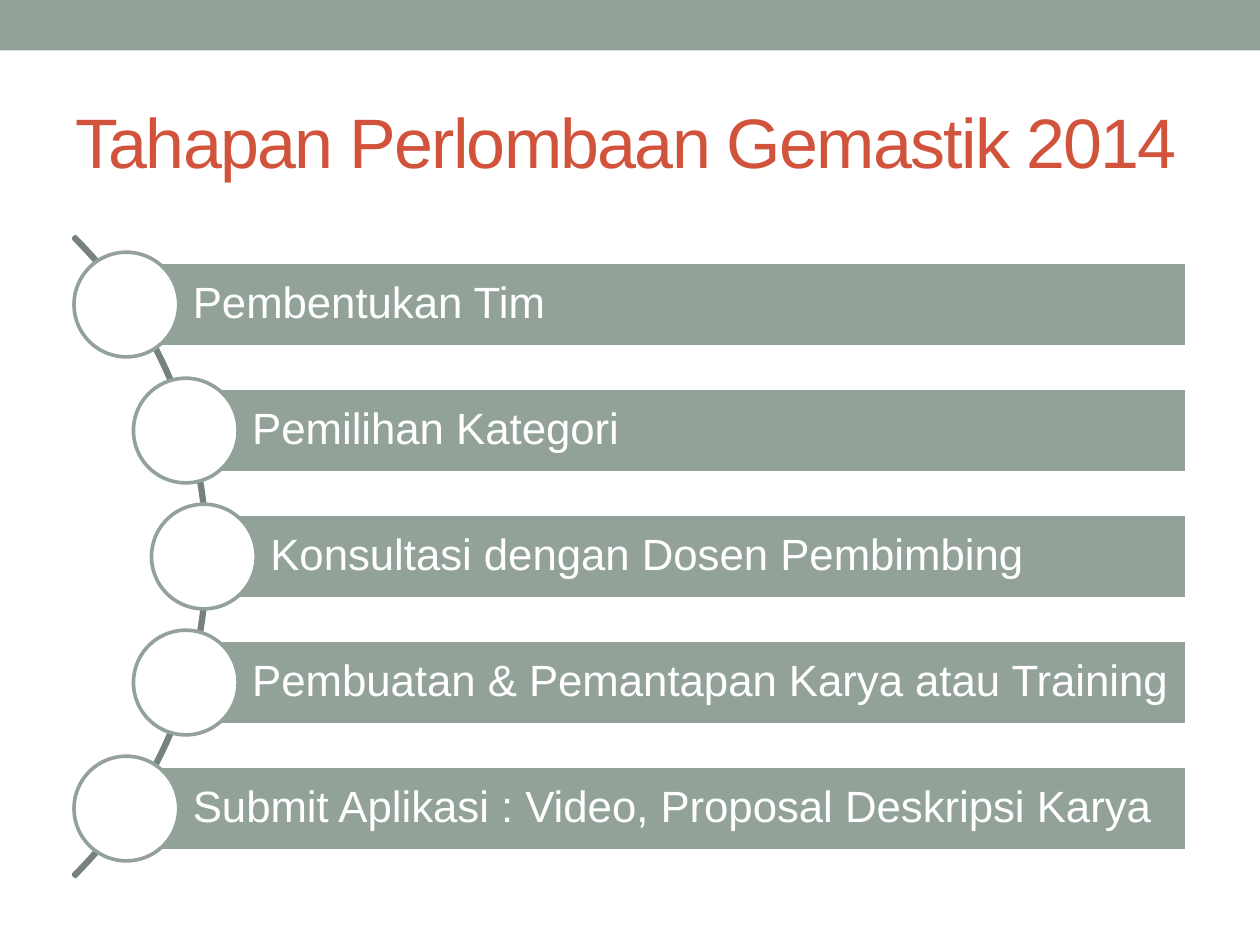
from dataclasses import dataclass
from math import sqrt

from pptx import Presentation
from pptx import util as u
from pptx.dml.color import RGBColor
from pptx.enum import shapes, text


@dataclass(frozen=True)
class Theme:
    sage: str = "93A299"
    dark_sage: str = "76827B"
    red: str = "D2533C"
    white: str = "FFFFFF"
    font: str = "Arial"
    title_size: float = 40
    step_size: float = 25
    line_width: float = 2.08


def write(tf, content, *, font, size, color, insets=None, line_spacing=None,
          letter_spacing=None):
    """Put one left-aligned, vertically centred paragraph in a text frame."""
    tf.word_wrap = True
    tf.auto_size = text.MSO_AUTO_SIZE.NONE
    tf.vertical_anchor = text.MSO_ANCHOR.MIDDLE
    if insets:
        tf.margin_left, tf.margin_top, tf.margin_right, tf.margin_bottom = map(u.Cm, insets)
    p = tf.paragraphs[0]
    p.alignment = text.PP_ALIGN.LEFT
    if line_spacing:
        p.line_spacing = line_spacing
    r = p.add_run()
    r.text = content
    r.font.name, r.font.size = font, u.Pt(size)
    r.font.color.rgb = RGBColor.from_string(color)
    if letter_spacing is not None:
        r.font._element.set("spc", str(int(letter_spacing * 100)))


class Builder:
    def __init__(self, s, theme):
        self.s, self.theme = s, theme

    def shape(self, kind, x, y, w, h, fill=None, line=None):
        sp = self.s.shapes.add_shape(kind, u.Cm(x), u.Cm(y), u.Cm(w), u.Cm(h))
        sp.shadow.inherit = False
        if fill:
            sp.fill.solid()
            sp.fill.fore_color.rgb = RGBColor.from_string(fill)
        else:
            sp.fill.background()
        if line:
            sp.line.color.rgb = RGBColor.from_string(line)
            sp.line.width = u.Pt(self.theme.line_width)
        else:
            sp.line.fill.background()
        return sp

    def title(self, content, x, y, w, h):
        t, sp = self.theme, self.s.shapes.title
        sp.left, sp.top, sp.width, sp.height = map(u.Cm, (x, y, w, h))
        write(sp.text_frame, content, font=t.font, size=t.title_size,
              color=t.red, letter_spacing=-1)

    def arc(self, cx, cy, radius):
        sp = self.shape(shapes.MSO_SHAPE.BLOCK_ARC, cx - radius, cy - radius,
                        2 * radius, 2 * radius, line=self.theme.dark_sage)
        for i, value in enumerate((189, 27, 0.003)):
            sp.adjustments[i] = value

    def bar(self, content, x, cy, right, height):
        t = self.theme
        sp = self.shape(shapes.MSO_SHAPE.RECTANGLE, x, cy - height / 2,
                        right - x, height, t.sage, t.white)
        write(sp.text_frame, content, font=t.font, size=t.step_size, color=t.white,
              insets=(1.34, 0.17, 0.17, 0.17), line_spacing=0.9)

    def circle(self, cx, cy, diameter):
        self.shape(shapes.MSO_SHAPE.OVAL, cx - diameter / 2, cy - diameter / 2,
                   diameter, diameter, self.theme.white, self.theme.sage)


def main():
    steps = [
        "Pembentukan Tim",
        "Pemilihan Kategori",
        "Konsultasi dengan Dosen Pembimbing",
        "Pembuatan & Pemantapan Karya atau Training",
        "Submit Aplikasi : Video, Proposal Deskripsi Karya",
    ]
    prs = Presentation()
    prs.slide_width, prs.slide_height = u.Cm(25.4), u.Cm(19.05)
    theme = Theme()
    b = Builder(prs.slides.add_slide(prs.slide_layouts[5]), theme)

    # Header band and title
    b.shape(shapes.MSO_SHAPE.RECTANGLE, 0, 0, 25.4, 1.02, theme.sage)
    b.title("Tahapan Perlombaan Gemastik 2014", 1.27, 1.47, 22.86, 2.74)

    # Curve behind the steps
    cx, cy, pitch = -4.93, 11.22, 2.54
    b.arc(cx, cy, 9.12)

    # Steps: each circle sits on the curve, its bar starts at the circle's centre
    for i, step in enumerate(steps):
        dy = (i - len(steps) // 2) * pitch
        x = cx + sqrt(9.04 ** 2 - dy ** 2)
        b.bar(step, x, cy + dy, 23.93, 1.69)
        b.circle(x, cy + dy, 2.11)

    prs.save("out.pptx")


if __name__ == "__main__":
    main()
